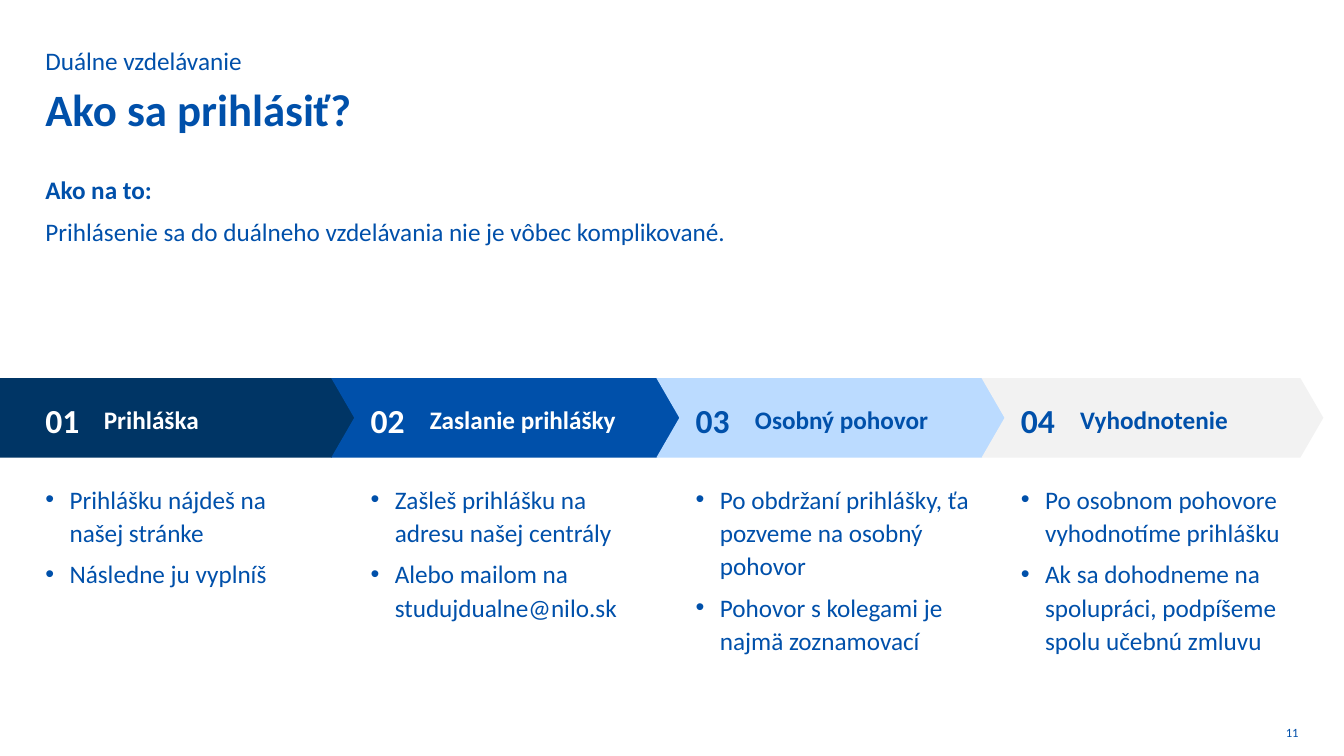
"""Builds the slide on how to apply for dual education."""
from lxml import etree
from pptx import Presentation
from pptx import util as u
from pptx.dml.color import RGBColor
from pptx.enum import shapes, text
from pptx.oxml.ns import qn

COLORS = {"navy": "003565", "blue": "0050AA", "sky": "BBDBFF", "grey": "F2F2F2", "white": "FFFFFF"}
FONT = "Calibri"
KICKER = "Duálne vzdelávanie"
HEADLINE = "Ako sa prihlásiť?"
INTRO = ["Ako na to:", "Prihlásenie sa do duálneho vzdelávania nie je vôbec komplikované."]
PAGE = "11"
STEPS = [
    ("Prihláška", "navy", "white",
     ["Prihlášku nájdeš na našej stránke", "Následne ju vyplníš"]),
    ("Zaslanie prihlášky", "blue", "white",
     ["Zašleš prihlášku na adresu našej centrály", "Alebo mailom na studujdualne@nilo.sk"]),
    ("Osobný pohovor", "sky", "blue",
     ["Po obdržaní prihlášky, ťa pozveme na osobný pohovor",
      "Pohovor s kolegami je najmä zoznamovací"]),
    ("Vyhodnotenie", "grey", "blue",
     ["Po osobnom pohovore vyhodnotíme prihlášku",
      "Ak sa dohodneme na spolupráci, podpíšeme spolu učebnú zmluvu"]),
]

WIDTH, HEIGHT = 13.33, 7.5
MARGIN, CONTENT, GAP = 0.45, 12.44, 0.46
PITCH = (CONTENT + GAP) / len(STEPS)
BAND_TOP, BAND_HEIGHT, POINT = 3.75, 0.79, 0.289
OVERHANG = 0.39
HANG = 0.24


def place(part, left, top, width, height):
    part.left, part.top, part.width, part.height = map(u.Inches, (left, top, width, height))


def write(part, lines, size, color="blue", bold=False, anchor=text.MSO_ANCHOR.TOP,
          align=text.PP_ALIGN.LEFT, inset=0, spacing=1.1, after=6, level=0, bullet=False):
    frame = part.text_frame
    frame.text = "\n".join(lines)
    frame.word_wrap = True
    frame.auto_size = text.MSO_AUTO_SIZE.NONE
    frame.vertical_anchor = anchor
    frame.margin_left = u.Inches(inset)
    frame.margin_top = frame.margin_right = frame.margin_bottom = 0
    for line in frame.paragraphs:
        line.alignment, line.level = align, level
        line.line_spacing = spacing
        line.space_before, line.space_after = u.Pt(0), u.Pt(after)
        properties = line._p.get_or_add_pPr()
        hang = u.Inches(HANG) if bullet else 0
        properties.set("marL", str(hang))
        properties.set("indent", str(-hang))
        if bullet:
            etree.SubElement(properties, qn("a:buFont")).set("typeface", "Arial")
            etree.SubElement(properties, qn("a:buChar")).set("char", "•")
        else:
            etree.SubElement(properties, qn("a:buNone"))
        for run in line.runs:
            run.font.name, run.font.size, run.font.bold = FONT, u.Pt(size), bold
            run.font.color.rgb = RGBColor.from_string(COLORS[color])


def add_text(owner, box, lines, size, **style):
    label = owner.add_textbox(*map(u.Inches, box))
    write(label, lines, size, **style)


def add_step(slide, index, step):
    name, fill, ink, tasks = step
    column = MARGIN + index * PITCH
    first, last = index == 0, index == len(STEPS) - 1
    left = 0 if first else column - OVERHANG
    width = 3.52 if first else 3.39 if last else 3.46
    outline = shapes.MSO_SHAPE.PENTAGON if first else shapes.MSO_SHAPE.CHEVRON
    middle = text.MSO_ANCHOR.MIDDLE

    group = slide.shapes.add_group_shape().shapes
    arrow = group.add_shape(outline, *map(u.Inches, (left, BAND_TOP, width, BAND_HEIGHT)))
    arrow.adjustments[0] = POINT
    arrow.shadow.inherit = False
    arrow.fill.solid()
    arrow.fill.fore_color.rgb = RGBColor.from_string(COLORS[fill])
    arrow.line.fill.background()
    write(arrow, [name], 18, color=ink, bold=True, anchor=middle, inset=1.03 if first else 0.75)
    add_text(group, (column, BAND_TOP, 0.6, BAND_HEIGHT), [f"{index + 1:02}"], 24,
             color=ink, bold=True, anchor=middle)
    add_text(slide.shapes, (column, 4.77, PITCH - GAP, 1.81), tasks, 18, level=2, bullet=True)


def main():
    deck = Presentation()
    deck.slide_width, deck.slide_height = u.Inches(WIDTH), u.Inches(HEIGHT)
    slide = deck.slides.add_slide(deck.slide_layouts[3])
    headline, intro, kicker = slide.placeholders

    place(intro, MARGIN, 1.7, CONTENT, 1.5)
    write(intro, INTRO, 18)
    intro.text_frame.paragraphs[0].runs[0].font.bold = True
    place(headline, MARGIN, 0.81, CONTENT, 0.63)
    write(headline, [HEADLINE], 32, bold=True, spacing=1.0, after=0)
    place(kicker, MARGIN, 0.44, CONTENT, 0.31)
    write(kicker, [KICKER], 18, anchor=text.MSO_ANCHOR.BOTTOM, spacing=1.0, after=0)

    add_text(slide.shapes, (12.49, 7.14, 0.39, 0.24), [PAGE], 9,
             anchor=text.MSO_ANCHOR.MIDDLE, align=text.PP_ALIGN.RIGHT)
    for index, step in enumerate(STEPS):
        add_step(slide, index, step)
    deck.save("out.pptx")


if __name__ == "__main__":
    main()
